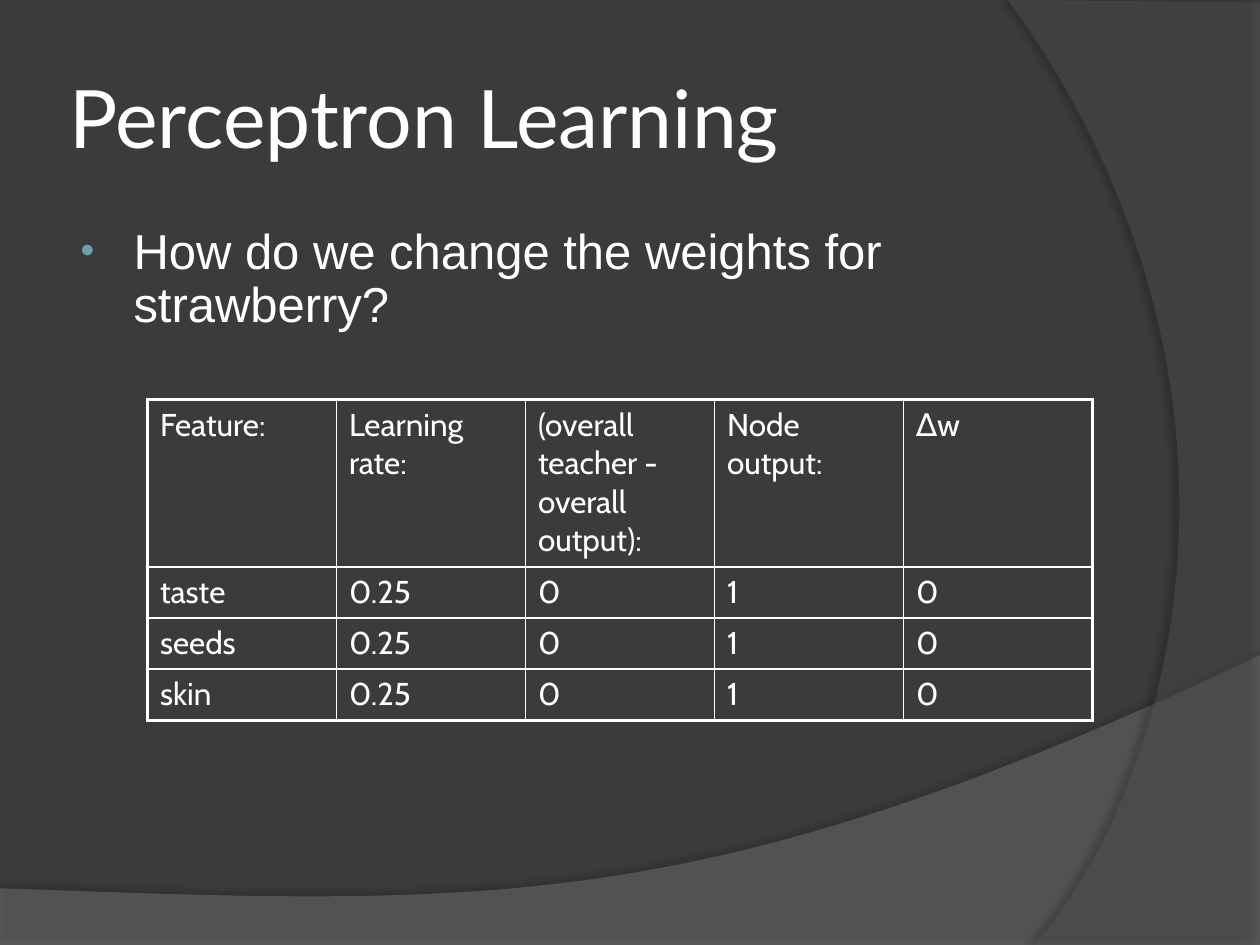
from lxml import etree
from pptx import Presentation
from pptx import util as u
from pptx.dml.color import RGBColor
from pptx.enum import text
from pptx.oxml import ns

SCALE = 9144
BACKGROUND = RGBColor(0x3B, 0x3B, 0x3B)
WAVE = RGBColor(0x7C, 0x7C, 0x7C)
ARC = RGBColor(0x59, 0x59, 0x59)
WHITE = RGBColor(0xFF, 0xFF, 0xFF)
BULLET = RGBColor(0x6E, 0xA0, 0xB0)
BLACK = RGBColor(0, 0, 0)

ROWS = [
    ["Feature:", "Learning rate:", "(overall teacher - overall output):", "Node output:", "∆w"],
    ["taste", "0.25", "0", "1", "0"],
    ["seeds", "0.25", "0", "1", "0"],
    ["skin", "0.25", "0", "1", "0"],
]


def px(*lengths):
    """Turn pixel lengths into EMU."""
    return [u.Emu(length * SCALE) for length in lengths]


def add_element(parent, tag, **attributes):
    """Append a drawing element with the given attributes."""
    return etree.SubElement(parent, ns.qn("a:" + tag), {k: str(v) for k, v in attributes.items()})


def add_colour(parent, colour, opacity=100):
    """Append a colour with an opacity in percent."""
    node = add_element(parent, "srgbClr", val=colour)
    if opacity < 100:
        add_element(node, "alpha", val=opacity * 1000)


def curve(start, first, second, end, steps=60):
    """Return points along a cubic Bezier curve."""
    points = []
    for step in range(1, steps + 1):
        t = step / steps
        weights = ((1 - t) ** 3, 3 * t * (1 - t) ** 2, 3 * t * t * (1 - t), t ** 3)
        corners = (start, first, second, end)
        points.append(tuple(sum(w * c[axis] for w, c in zip(weights, corners)) for axis in (0, 1)))
    return points


def place(shape, box):
    """Move a shape to a pixel box."""
    shape.left, shape.top, shape.width, shape.height = px(*box)


def style(para, name, size):
    """Give a paragraph its white left-aligned font."""
    para.alignment = text.PP_ALIGN.LEFT
    para.space_before = u.Pt(0)
    para.font.name = name
    para.font.size = u.Pt(size)
    para.font.color.rgb = WHITE


def add_sweep(page, box, points, colour, opacity, shadow):
    """Draw a translucent shadowed shape behind the placeholders."""
    left, top = box
    outline = [(round((left + x) * SCALE), round((top + y) * SCALE)) for x, y in points]
    builder = page.shapes.build_freeform(*outline[0], scale=1.0)
    builder.add_line_segments(outline[1:], close=True)
    sweep = builder.convert_to_shape()
    sweep.fill.solid()
    sweep.fill.fore_color.rgb = colour
    sweep.line.fill.background()
    properties = sweep.element.spPr
    add_element(properties.find(".//" + ns.qn("a:srgbClr")), "alpha", val=opacity * 1000)
    distance, angle, darkness = shadow
    effects = add_element(properties, "effectLst")
    cast = add_element(effects, "outerShdw", blurRad=u.Pt(4), dist=u.Pt(distance),
                       dir=angle * 60000, algn="ctr", rotWithShape=0)
    add_colour(cast, BLACK, darkness)
    page.shapes.title.element.addprevious(sweep.element)


def add_backdrop(page):
    """Paint the background and its two sweeping shapes."""
    page.background.fill.solid()
    page.background.fill.fore_color.rgb = BACKGROUND
    wave = [(0, 185), (0, 231), (1000, 231), (1000, 0)]
    wave += curve((1000, 0), (559, 209), (391, 199), (0, 185))
    add_sweep(page, (0, 520), wave, WAVE, 45, (3.5, 270, 35))
    arc = [(200, 2), (200, 750), (21, 750)]
    arc += curve((21, 750), (135, 619), (218, 300), (0, 0))
    add_sweep(page, (800, 0), arc, ARC, 40, (4, 180, 45))


def fill_title(title, box, wording):
    """Place and format the title."""
    place(title, box)
    frame = title.text_frame
    frame.text = wording
    frame.vertical_anchor = text.MSO_ANCHOR.MIDDLE
    frame.margin_left, frame.margin_top, frame.margin_right, frame.margin_bottom = px(5, 5, 5, 5)
    style(frame.paragraphs[0], "Lato", 46)


def fill_body(body, box, wording):
    """Place the body and format its bulleted line."""
    place(body, box)
    body.text_frame.text = wording
    para = body.text_frame.paragraphs[0]
    para.line_spacing = 0.9
    para.space_before = u.Pt(0)
    properties = para._p.get_or_add_pPr()
    indent, hanging = px(46, -42)
    properties.set("marL", str(indent))
    properties.set("indent", str(hanging))
    add_colour(add_element(properties, "buClr"), BULLET)
    add_element(properties, "buSzPct", val=80000)
    add_element(properties, "buFont", typeface="Arial")
    add_element(properties, "buChar", char="•")
    style(para, "Arial", 28)


def add_borders(cell, outer_sides):
    """Draw cell borders, heavier on the outer sides."""
    properties = cell._tc.get_or_add_tcPr()
    for side in "LRTB":
        width = 2.25 if side in outer_sides else 1
        line = add_element(properties, "ln" + side, w=u.Pt(width))
        add_colour(add_element(line, "solidFill"), WHITE)


def add_weights_table(page, box, rows, header_height, row_height):
    """Add the table of weight changes."""
    table = page.shapes.add_table(len(rows), len(rows[0]), *px(*box)).table
    table.first_row = table.horz_banding = False
    last_row, last_column = len(rows) - 1, len(rows[0]) - 1
    for r, values in enumerate(rows):
        table.rows[r].height = px(row_height if r else header_height)[0]
        for c, value in enumerate(values):
            cell = table.cell(r, c)
            cell.text = value
            edges = {"L": c == 0, "R": c == last_column, "T": r == 0, "B": r == last_row}
            add_borders(cell, [side for side, outer in edges.items() if outer])
            cell.fill.background()
            style(cell.text_frame.paragraphs[0], "Cabin", 18)


def main():
    """Build the deck and save it."""
    deck = Presentation()
    deck.slide_width, deck.slide_height = px(1000, 750)
    page = deck.slides.add_slide(deck.slide_layouts[1])
    add_backdrop(page)
    fill_title(page.shapes.title, (50, 30, 817, 125), "Perceptron Learning")
    fill_body(page.placeholders[1], (50, 175, 817, 495),
              "How do we change the weights for strawberry?")
    add_weights_table(page, (117, 317, 750, 253), ROWS, 133, 40)
    deck.save("out.pptx")


if __name__ == "__main__":
    main()
